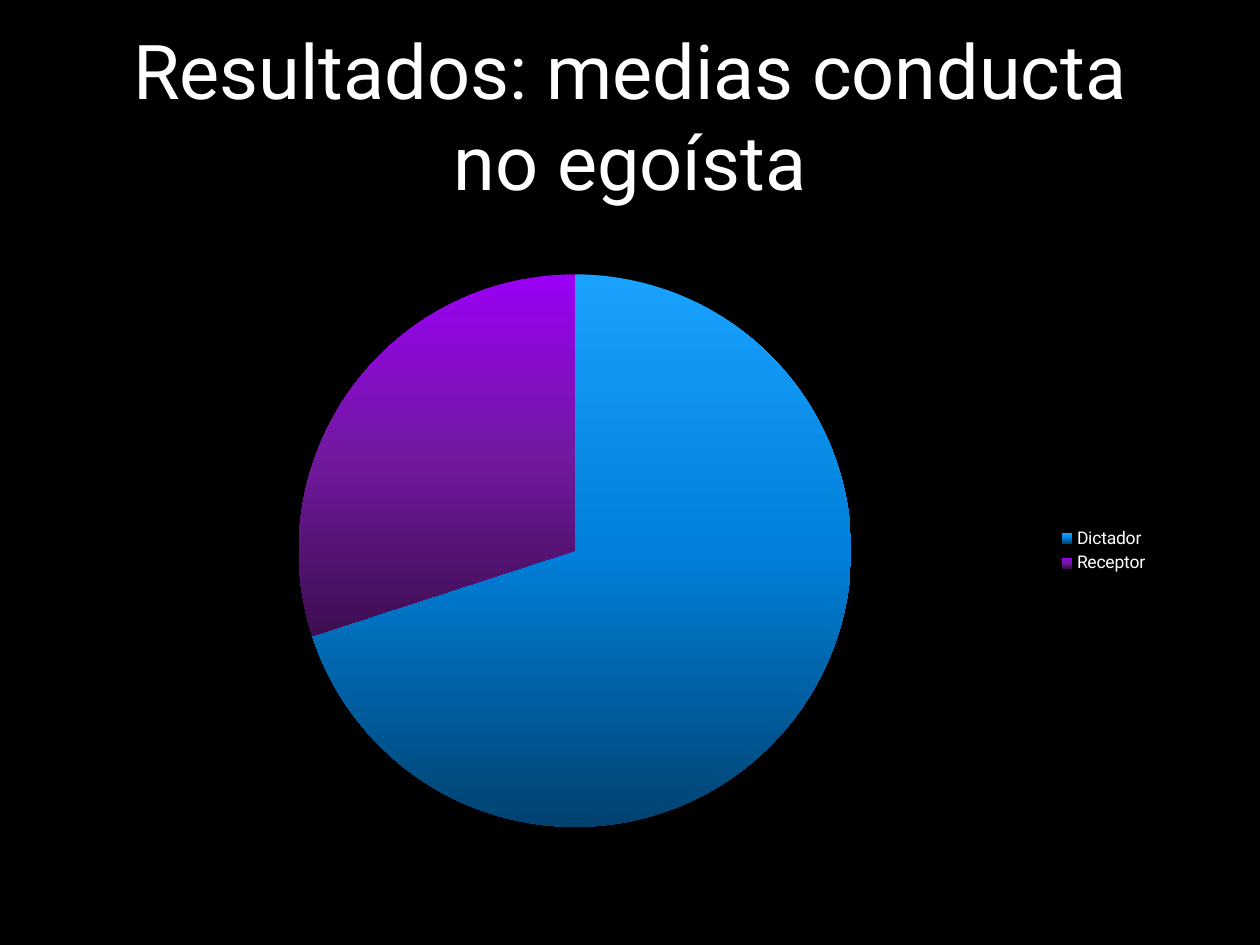
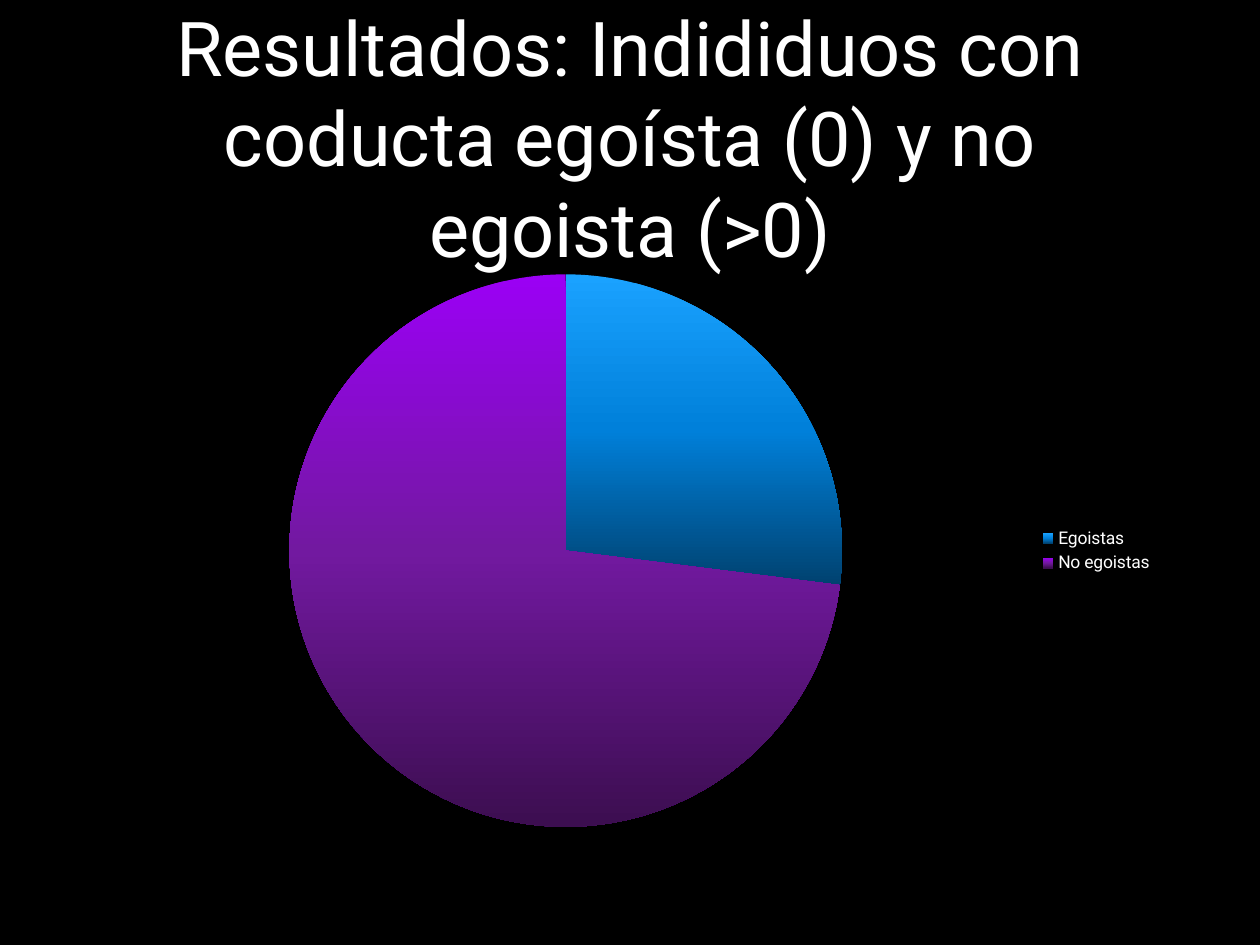
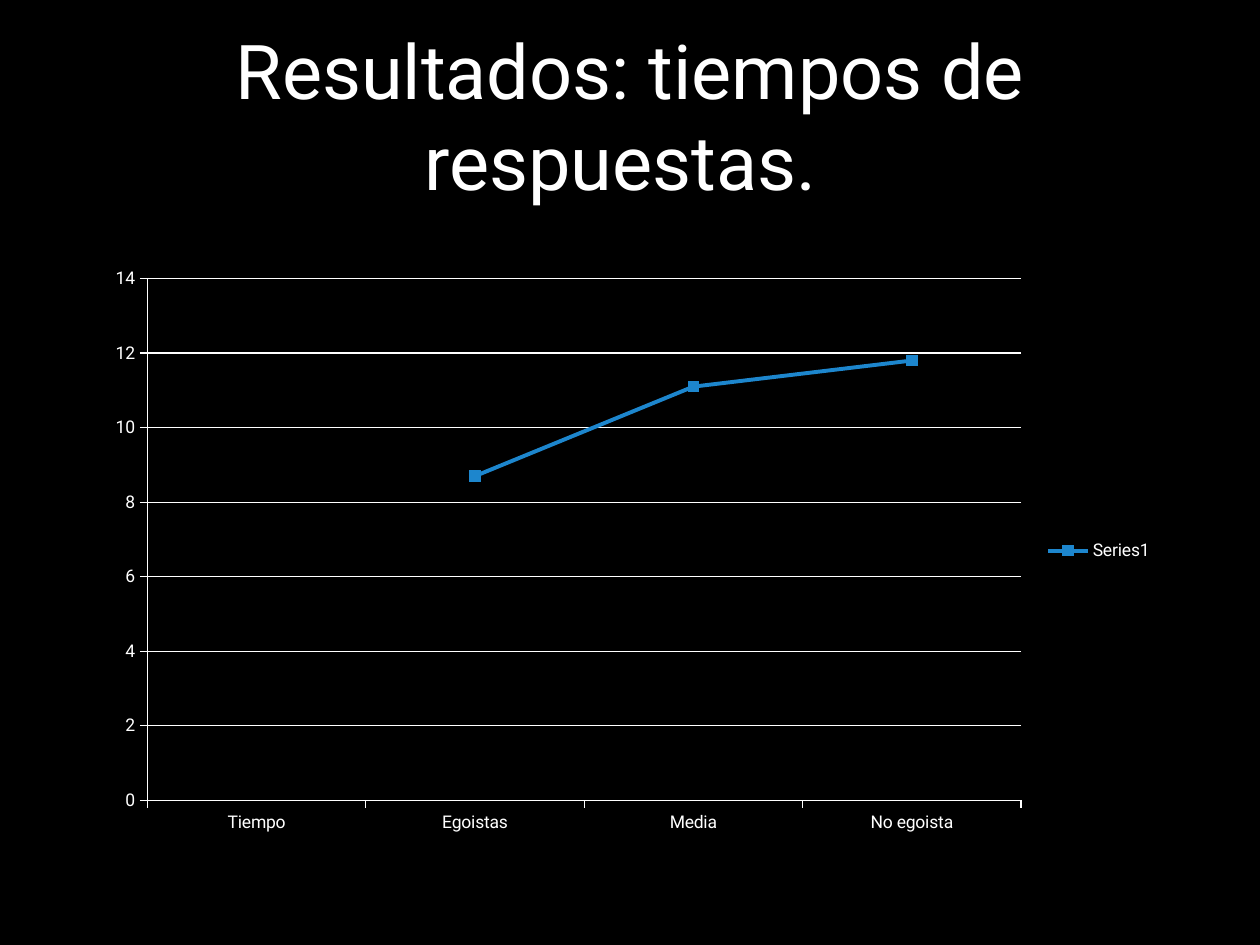
"""Build three slides on the results of a dictator game."""
from lxml.etree import SubElement
from pptx import Presentation
from pptx.chart.data import CategoryChartData
from pptx.dml.color import RGBColor
from pptx.enum.chart import XL_CHART_TYPE, XL_LEGEND_POSITION, XL_MARKER_STYLE, XL_TICK_MARK
from pptx.enum.text import MSO_ANCHOR, PP_ALIGN
from pptx.oxml.ns import qn
from pptx.util import Cm, Pt

BLACK = RGBColor(0x00, 0x00, 0x00)
WHITE = RGBColor(0xFF, 0xFF, 0xFF)
BLUE = RGBColor(0x1D, 0x86, 0xCD)
BLUE_SHADES = (RGBColor(0x1A, 0xA2, 0xFF), RGBColor(0x00, 0x80, 0xDA), RGBColor(0x00, 0x42, 0x70))
PURPLE_SHADES = (RGBColor(0x9B, 0x00, 0xF5), RGBColor(0x72, 0x19, 0xA0), RGBColor(0x3C, 0x0E, 0x50))

FONT = "Roboto"
LEFT, WIDTH = Cm(1.9), Cm(21.6)
TITLE_TOP, TITLE_HEIGHT, TALL_TITLE_HEIGHT = Cm(0.33), Cm(3.96), Cm(4.85)
CHART_TOP, CHART_HEIGHT = Cm(5.18), Cm(11.84)


class ResultsDeck:
    """Hold the shared style and the current slide."""

    def __init__(self):
        self.presentation = Presentation()
        self.presentation.slide_width = Cm(25.4)
        self.presentation.slide_height = Cm(19.05)
        self.slide = None

    def add_slide(self, title, title_height=TITLE_HEIGHT):
        """Start a black slide with a centred title."""
        self.slide = self.presentation.slides.add_slide(self.presentation.slide_layouts[6])
        background = self.slide.background.fill
        background.solid()
        background.fore_color.rgb = BLACK
        frame = self.slide.shapes.add_textbox(LEFT, TITLE_TOP, WIDTH, title_height).text_frame
        frame.word_wrap = True
        frame.vertical_anchor = MSO_ANCHOR.MIDDLE
        paragraph = frame.paragraphs[0]
        paragraph.alignment = PP_ALIGN.CENTER
        run = paragraph.add_run()
        run.text = title
        self.style_font(run.font, 43.2)

    def style_font(self, font, size):
        """Apply the white deck font."""
        font.name = FONT
        font.size = Pt(size)
        font.color.rgb = WHITE

    def add_chart(self, chart_type, series_name, categories, values):
        """Add a chart with its legend on the right."""
        data = CategoryChartData()
        data.categories = categories
        data.add_series(series_name, values)
        chart = self.slide.shapes.add_chart(
            chart_type, LEFT, CHART_TOP, WIDTH, CHART_HEIGHT, data).chart
        self.style_font(chart.font, 10)
        chart.has_title = False
        chart.has_legend = True
        chart.legend.position = XL_LEGEND_POSITION.RIGHT
        chart.legend.include_in_layout = False
        return chart

    def add_pie(self, categories, values):
        """Add a pie whose slices darken downwards."""
        chart = self.add_chart(XL_CHART_TYPE.PIE, "Series 1", categories, values)
        chart.plots[0].vary_by_categories = True
        slices = chart.plots[0].series[0].points
        shades = (BLUE_SHADES, PURPLE_SHADES)
        for index in range(len(shades)):
            slice_format = slices[index].format
            slice_format.fill.gradient()
            slice_format.fill.gradient_angle = 270
            slice_format.line.fill.background()
        for stops, colors in zip(chart.element.xpath(".//a:gsLst"), shades):
            self.set_stops(stops, colors)

    def set_stops(self, stops, colors):
        """Spread the colours evenly over a gradient."""
        for stop in list(stops):
            stops.remove(stop)
        for index, color in enumerate(colors):
            position = index * 100000 // (len(colors) - 1)
            stop = SubElement(stops, qn("a:gs"), pos=str(position))
            SubElement(stop, qn("a:srgbClr"), val=str(color))

    def add_line_chart(self, series_name, categories, values):
        """Add a line chart with square markers."""
        chart = self.add_chart(XL_CHART_TYPE.LINE_MARKERS, series_name, categories, values)
        chart.plots[0].vary_by_categories = False
        series = chart.plots[0].series[0]
        series.smooth = False
        self.style_line(series.format.line, BLUE, 2.25)
        series.marker.style = XL_MARKER_STYLE.SQUARE
        series.marker.size = 6
        series.marker.format.fill.solid()
        series.marker.format.fill.fore_color.rgb = BLUE
        series.marker.format.line.fill.background()
        for axis in (chart.category_axis, chart.value_axis):
            axis.major_tick_mark = XL_TICK_MARK.OUTSIDE
            axis.minor_tick_mark = XL_TICK_MARK.NONE
            self.style_line(axis.format.line, WHITE, 0.75)
        chart.value_axis.minimum_scale = 0
        chart.value_axis.maximum_scale = 14
        chart.value_axis.major_unit = 2
        chart.value_axis.has_major_gridlines = True
        self.style_line(chart.value_axis.major_gridlines.format.line, WHITE, 0.75)

    def style_line(self, line, color, width):
        """Set the colour and width of a line."""
        line.color.rgb = color
        line.width = Pt(width)


def main():
    """Build and save the slides."""
    deck = ResultsDeck()
    deck.add_slide("Resultados: medias conducta no egoísta")
    deck.add_pie(("Dictador ", "Receptor "), (70, 30))
    deck.add_slide("Resultados: Indididuos con coducta egoísta (0) y no egoista (>0)", TALL_TITLE_HEIGHT)
    deck.add_pie(("Egoistas", "No egoistas"), (27, 73))
    deck.add_slide("Resultados: tiempos de respuestas. ")
    deck.add_line_chart(
        "Series1", ("Tiempo", "Egoistas", "Media", "No egoista"), (None, 8.7, 11.1, 11.8))
    deck.presentation.save("out.pptx")


if __name__ == "__main__":
    main()
